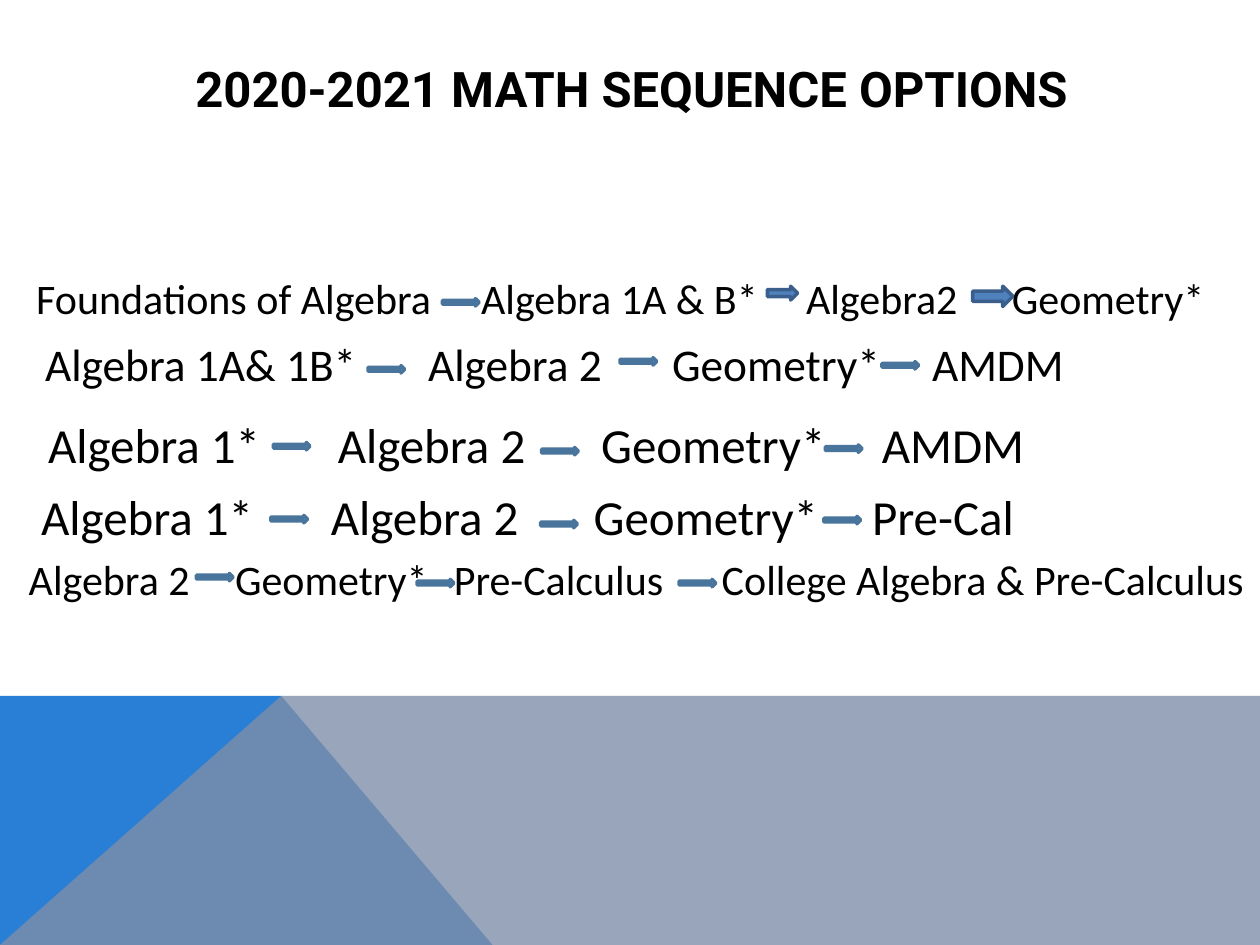
from dataclasses import dataclass

from lxml.etree import SubElement
from pptx import Presentation
from pptx.dml.color import RGBColor
from pptx.enum.shapes import MSO_SHAPE
from pptx.enum.text import MSO_ANCHOR, PP_ALIGN
from pptx.oxml.ns import qn
from pptx.util import Cm, Pt


@dataclass(frozen=True)
class Theme:
    """Colours, fonts and type sizes of the slide."""
    text: str = "000000"
    blue: str = "297FD5"
    slate: str = "7F8FA9"
    light_arrow: tuple = ("629DD1", "49749B")
    strong_arrow: tuple = ("4F81BD", "3A5F8C")
    heading_font: str = "Roboto"
    body_font: str = "Calibri"
    large: float = 28
    medium: float = 25.9
    small: float = 24


THEME = Theme()
ARROW_SIZE = (0.74, 0.15)
TOP, BOTTOM = MSO_ANCHOR.TOP, MSO_ANCHOR.BOTTOM

# Each row: courses, their left edges, box, type size, anchor, arrow positions
SEQUENCES = [
    (["Foundations of Algebra", "Algebra 1A & B*", "Algebra2", "Geometry*"],
     [0.73, 9.7, 16.25, 20.4], (0.53, 4.88, 24.26, 1.75), THEME.small, BOTTOM,
     [(8.92, 6.02)]),
    (["Algebra 1A& 1B*", "Algebra 2", "Geometry*", "AMDM"],
     [0.91, 8.63, 13.55, 18.79], (0.46, 6.65, 21.79, 1.9), THEME.medium, TOP,
     [(7.42, 7.37), (12.5, 7.21), (17.78, 7.29)]),
    (["Algebra 1*", "Algebra 2", "Geometry*", "AMDM"],
     [0.97, 6.81, 12.12, 17.78], (0.48, 8.23, 21.79, 2.46), THEME.large, TOP,
     [(5.51, 8.92), (10.92, 9.02), (16.64, 8.97)]),
    (["Algebra 1*", "Algebra 2", "Geometry*", "Pre-Cal"],
     [0.83, 6.67, 11.97, 17.58], (0.36, 9.68, 21.79, 2.46), THEME.large, TOP,
     [(5.46, 10.39), (10.9, 10.49), (16.61, 10.41)]),
    (["Algebra 2", "Geometry*", "Pre-Calculus", "College Algebra & Pre-Calculus"],
     [0.58, 4.74, 9.15, 14.55], (0, 10.54, 25.4, 1.75), THEME.small, BOTTOM,
     [(3.96, 11.56), (8.41, 11.68), (13.69, 11.68)]),
]
STRONG_ARROWS = [(15.47, 5.77, 0.61, 0.28), (19.61, 5.77, 0.81, 0.41)]


def add_text(page, text, *, box, size, font, bold=False, align=PP_ALIGN.LEFT,
             anchor=TOP, inset=0, tabs=()):
    """Add a one-paragraph text box, with tab stops in centimetres."""
    shape = page.shapes.add_textbox(*map(Cm, box))
    frame = shape.text_frame
    frame.word_wrap = True
    frame.vertical_anchor = anchor
    frame.margin_left, frame.margin_right = Cm(inset), 0
    para = frame.paragraphs[0]
    para.alignment = align
    if tabs:
        stops = SubElement(para._p.get_or_add_pPr(), qn("a:tabLst"))
        for tab in tabs:
            SubElement(stops, qn("a:tab"), pos=str(Cm(tab)), algn="l")
    span = para.add_run()
    span.text = text
    span.font.size, span.font.name, span.font.bold = Pt(size), font, bold
    span.font.color.rgb = RGBColor.from_string(THEME.text)


def set_fill(shape, colour):
    """Give a shape a plain fill and no shadow."""
    shape.shadow.inherit = False
    shape.fill.solid()
    shape.fill.fore_color.rgb = RGBColor.from_string(colour)


def add_panel(page, points, colour, opacity=100):
    """Add a borderless polygon through points in centimetres."""
    corners = [(Cm(x), Cm(y)) for x, y in points]
    builder = page.shapes.build_freeform(*corners[0], scale=1.0)
    builder.add_line_segments(corners[1:], close=True)
    panel = builder.convert_to_shape()
    set_fill(panel, colour)
    panel.line.fill.background()
    if opacity < 100:
        tint = panel._element.spPr.find(qn("a:solidFill"))[0]
        SubElement(tint, qn("a:alpha"), val=str(opacity * 1000))


def add_arrow(page, box, colours):
    """Add a right arrow with a fill and an outline colour."""
    arrow = page.shapes.add_shape(MSO_SHAPE.RIGHT_ARROW, *map(Cm, box))
    set_fill(arrow, colours[0])
    arrow.line.color.rgb = RGBColor.from_string(colours[1])
    arrow.line.width = Pt(2)


def add_sequence(page, courses, starts, box, size, anchor, arrows):
    """Add one row of courses and the arrows between them."""
    add_text(page, "\t".join(courses), box=box, size=size, font=THEME.body_font,
             anchor=anchor, inset=starts[0] - box[0],
             tabs=[start - starts[0] for start in starts[1:]])
    for position in arrows:
        add_arrow(page, position + ARROW_SIZE, THEME.light_arrow)


def main():
    """Build and save the slide."""
    deck = Presentation()
    deck.slide_width, deck.slide_height = Cm(25.4), Cm(19.05)
    page = deck.slides.add_slide(deck.slide_layouts[6])
    horizon, peak, base = 14.03, 5.67, 19.05
    add_panel(page, [(0, base), (0, horizon), (peak, horizon), (9.93, base)], THEME.blue)
    add_panel(page, [(0, base), (peak, horizon), (25.4, horizon), (25.4, base)],
              THEME.slate, opacity=80)
    add_text(page, "2020-2021 MATH SEQUENCE OPTIONS", box=(2.29, 1.02, 20.88, 1.52),
             size=THEME.large, font=THEME.heading_font, bold=True,
             align=PP_ALIGN.CENTER, anchor=MSO_ANCHOR.MIDDLE)
    for sequence in SEQUENCES:
        add_sequence(page, *sequence)
    for box in STRONG_ARROWS:
        add_arrow(page, box, THEME.strong_arrow)
    deck.save("out.pptx")


if __name__ == "__main__":
    main()
